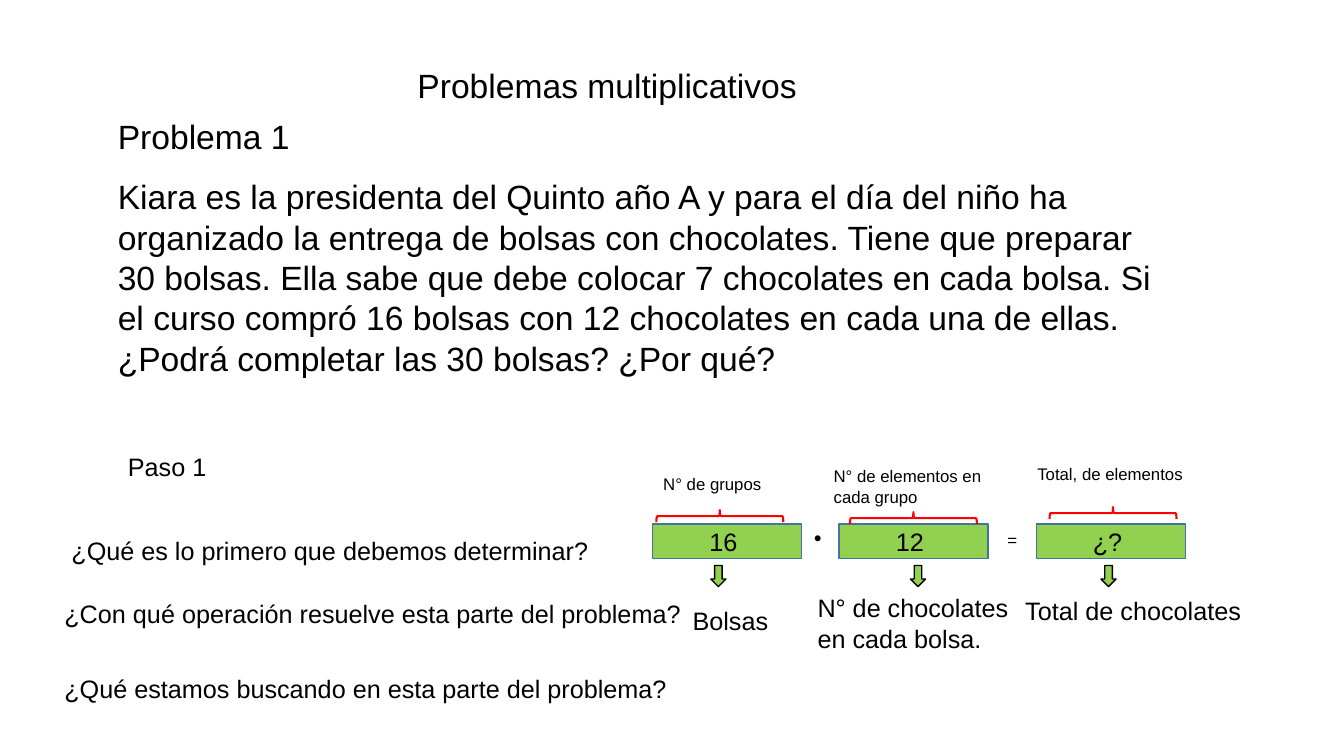
from pptx import Presentation
from pptx.dml.color import RGBColor
from pptx.enum import shapes as kinds, text
from pptx.util import Inches, Pt

BLACK, WHITE, GREEN, BLUE, RED = "000000", "FFFFFF", "92D050", "43739E", "FF0000"


def color(value):
    return RGBColor.from_string(value)


def write(shape, words, size, font="Arial", align=text.PP_ALIGN.LEFT,
          anchor=text.MSO_ANCHOR.TOP):
    frame = shape.text_frame
    frame.text = words
    frame.word_wrap = True
    frame.vertical_anchor = anchor
    paragraph = frame.paragraphs[0]
    paragraph.alignment = align
    paragraph.font.size = Pt(size)
    paragraph.font.name = font
    paragraph.font.color.rgb = color(BLACK)


def add_text(slide, box, words, size):
    shape = slide.shapes.add_textbox(*map(Inches, box))
    write(shape, words, size)


def add_shape(slide, kind, box, fill=None, line=None, width=1):
    shape = slide.shapes.add_shape(kind, *map(Inches, box))
    shape.shadow.inherit = False
    if fill:
        shape.fill.solid()
        shape.fill.fore_color.rgb = color(fill)
    else:
        shape.fill.background()
    if line:
        shape.line.color.rgb = color(line)
        shape.line.width = Pt(width)
    else:
        shape.line.fill.background()
    return shape


def add_title(slide, box, words):
    title = slide.shapes.title
    title.left, title.top, title.width, title.height = map(Inches, box)
    write(title, words, 24)


def add_statement(slide, left, top, width):
    add_text(slide, (left, top, 1.97, 0.5), "Problema 1", 24)
    add_text(slide, (left, top + 0.6, width, 2.12),
             "Kiara es la presidenta del Quinto año A y para el día del niño ha "
             "organizado la entrega de bolsas con chocolates. Tiene que preparar "
             "30 bolsas. Ella sabe que debe colocar 7 chocolates en cada bolsa. "
             "Si el curso compró 16 bolsas con 12 chocolates en cada una de ellas. "
             "¿Podrá completar las 30 bolsas? ¿Por qué?", 24)


def add_questions(slide, left, top):
    questions = [
        (0.63, 0, 0.99, "Paso 1"),
        (0.07, 0.83, 5.58, "¿Qué es lo primero que debemos determinar?"),
        (0, 1.46, 6.39, "¿Con qué operación resuelve esta parte del problema?"),
        (0, 2.2, 6.23, "¿Qué estamos buscando en esta parte del problema?"),
    ]
    for indent, drop, width, words in questions:
        add_text(slide, (left + indent, top + drop, width, 0.4), words, 18)


def add_term(slide, left, top, number, label, label_box, brace_center,
             arrow_center, caption, caption_box):
    rectangle = kinds.MSO_SHAPE.RECTANGLE
    factor = add_shape(slide, rectangle, (left, top, 1.48, 0.34), GREEN, BLUE)
    write(factor, number, 18, align=text.PP_ALIGN.CENTER,
          anchor=text.MSO_ANCHOR.MIDDLE)
    factor.text_frame.margin_top = factor.text_frame.margin_bottom = 0
    factor.text_frame.margin_right = Inches(0.17)

    dx, dy, width, height = label_box
    heading = add_shape(slide, rectangle, (left + dx, top + dy, width, height), WHITE)
    write(heading, label, 12, anchor=text.MSO_ANCHOR.MIDDLE)

    dx, dy = brace_center
    brace = add_shape(slide, kinds.MSO_SHAPE.RIGHT_BRACE,
                      (left + dx - 0.06, top + dy - 0.63, 0.12, 1.26), None, RED, 1.5)
    brace.rotation = 270

    add_shape(slide, kinds.MSO_SHAPE.DOWN_ARROW,
              (left + arrow_center - 0.07, top + 0.41, 0.15, 0.21), GREEN, BLACK)

    dx, dy, width, height = caption_box
    add_text(slide, (left + dx, top + dy, width, height), caption, 18)


def add_operator(slide, left, top, sign, font):
    operator = add_shape(slide, kinds.MSO_SHAPE.RECTANGLE, (left, top, 0.28, 0.26), WHITE)
    write(operator, sign, 12, font, text.PP_ALIGN.CENTER, text.MSO_ANCHOR.MIDDLE)
    operator.text_frame.margin_left = operator.text_frame.margin_right = 0


def add_multiplication(slide, left, top):
    terms = [
        (0, "16", "N° de grupos", (0.01, -0.55, 1.27, 0.3), (0.67, -0.08), 0.65,
         "Bolsas", (0.3, 0.76, 0.98, 0.4)),
        (1.85, "12", "N° de elementos en cada grupo", (-0.15, -0.61, 1.76, 0.47),
         (0.74, -0.06), 0.78, "N° de chocolates en cada bolsa.",
         (-0.31, 0.63, 2.11, 0.71)),
        (3.81, "¿?", "Total, de elementos", (-0.09, -0.62, 1.76, 0.25),
         (0.76, -0.11), 0.71, "Total de chocolates", (-0.21, 0.66, 2.41, 0.4)),
    ]
    for offset, *parts in terms:
        add_term(slide, left + offset, top, *parts)
    add_operator(slide, left + 1.5, top, "•", "Calibri")
    add_operator(slide, left + 3.43, top + 0.03, "=", "Arial")


def main():
    presentation = Presentation()
    presentation.slide_width = Inches(13.33)
    presentation.slide_height = Inches(7.5)
    slide = presentation.slides.add_slide(presentation.slide_layouts[5])
    add_title(slide, (4.04, 0.59, 4.41, 0.5), "Problemas multiplicativos")
    add_statement(slide, 1.07, 1.1, 10.49)
    add_questions(slide, 0.54, 4.43)
    add_multiplication(slide, 6.47, 5.2)
    presentation.save("out.pptx")


if __name__ == "__main__":
    main()
